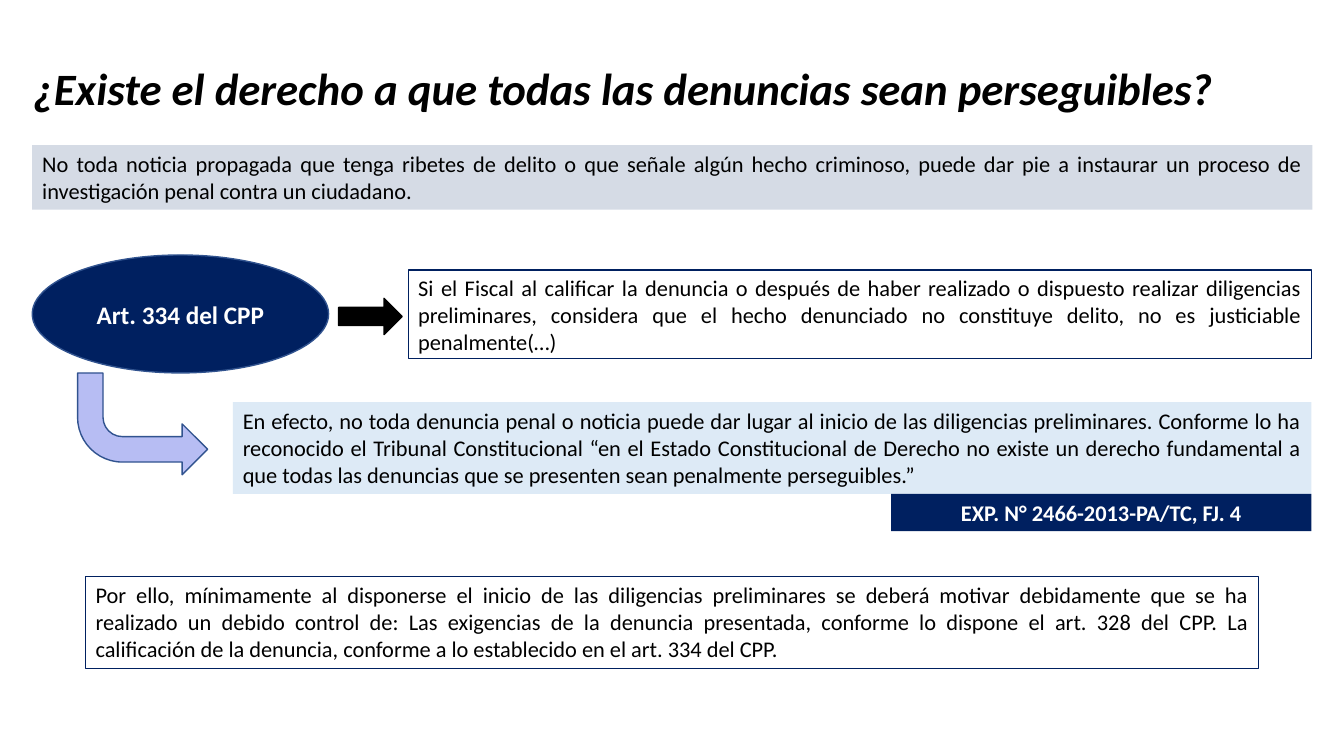
import collections

import pptx
import pptx.dml.color
import pptx.enum.shapes
import pptx.enum.text
import pptx.util

COLUMNS, ROWS = 160, 90
NAVY, BLACK, WHITE, OUTLINE = "002060", "000000", "FFFFFF", "31538F"
SHAPES = pptx.enum.shapes.MSO_SHAPE
ALIGN = pptx.enum.text.PP_ALIGN
ANCHOR = pptx.enum.text.MSO_ANCHOR

Box = collections.namedtuple("Box", "left top width height")

presentation = pptx.Presentation()
presentation.slide_width = pptx.util.Inches(13.33)
presentation.slide_height = pptx.util.Inches(7.5)


def color(value):
    return pptx.dml.color.RGBColor.from_string(value)


def inside(box, left, top, width, height):
    return Box(box.left + left, box.top + top, width, height)


def place(box):
    column = presentation.slide_width / COLUMNS
    row = presentation.slide_height / ROWS
    return [round(length * unit) for length, unit in zip(box, (column, row, column, row))]


def write(shape, text, size=16, ink=BLACK, align=ALIGN.JUSTIFY,
          anchor=ANCHOR.TOP, bold=False, italic=False):
    frame = shape.text_frame
    frame.word_wrap = True
    frame.vertical_anchor = anchor
    paragraph = frame.paragraphs[0]
    paragraph.alignment = align
    run = paragraph.add_run()
    run.text = text
    run.font.name = "Calibri"
    run.font.size = pptx.util.Pt(size)
    run.font.bold = bold
    run.font.italic = italic
    run.font.color.rgb = color(ink)


def add_shape(slide, kind, box, fill=None, line=None, line_width=1):
    shape = slide.shapes.add_shape(kind, *place(box))
    shape.shadow.inherit = False
    if fill:
        shape.fill.solid()
        shape.fill.fore_color.rgb = color(fill)
    else:
        shape.fill.background()
    if line:
        shape.line.color.rgb = color(line)
        shape.line.width = pptx.util.Pt(line_width)
    else:
        shape.line.fill.background()
    return shape


def add_title(slide, box):
    title = slide.shapes.add_textbox(*place(box))
    write(title, "¿Existe el derecho a que todas las denuncias sean perseguibles?",
          size=32, align=ALIGN.LEFT, bold=True, italic=True)


def add_introduction(slide, box):
    banner = add_shape(slide, SHAPES.RECTANGLE, box, "D5DBE5")
    write(banner, "No toda noticia propagada que tenga ribetes de delito o que señale algún "
          "hecho criminoso, puede dar pie a instaurar un proceso de investigación penal "
          "contra un ciudadano.")


def add_article(slide, box):
    article = add_shape(slide, SHAPES.OVAL, inside(box, 0, 0, 35.28, box.height), NAVY, OUTLINE)
    write(article, "Art. 334 del CPP", size=18, ink=WHITE, align=ALIGN.CENTER,
          anchor=ANCHOR.MIDDLE, bold=True)

    rule_left = 44.76
    rule_box = inside(box, rule_left, 1.8, box.width - rule_left, 10.56)
    rule = add_shape(slide, SHAPES.RECTANGLE, rule_box, WHITE, NAVY)
    write(rule, "Si el Fiscal al calificar la denuncia o después de haber realizado o dispuesto "
          "realizar diligencias preliminares, considera que el hecho denunciado no constituye "
          "delito, no es justiciable penalmente(…)", anchor=ANCHOR.MIDDLE)

    add_shape(slide, SHAPES.RIGHT_ARROW, inside(box, 36.48, 5.16, 7.56, 4.32), BLACK, BLACK)


def add_ruling(slide, box):
    arrow = add_shape(slide, SHAPES.BENT_ARROW, inside(box, 0, 0, 15.48, 12.12),
                      "B7BDF3", OUTLINE)
    for index, share in enumerate((0.25, 0.25, 0.25, 0.44)):
        arrow.adjustments[index] = share
    arrow.rotation = 180
    arrow.element.spPr.xfrm.set("flipH", "1")

    quote_left, quote_top, quote_height = 18.48, 3.48, 10.92
    quote_box = inside(box, quote_left, quote_top, box.width - quote_left, quote_height)
    quote = add_shape(slide, SHAPES.RECTANGLE, quote_box, "DDEAF6")
    write(quote, "En efecto, no toda denuncia penal o noticia puede dar lugar al inicio de las "
          "diligencias preliminares. Conforme lo ha reconocido el Tribunal Constitucional “en el "
          "Estado Constitucional de Derecho no existe un derecho fundamental a que todas las "
          "denuncias que se presenten sean penalmente perseguibles.”")

    case_width, case_top = 50.04, quote_top + quote_height
    case_box = inside(box, box.width - case_width, case_top, case_width, box.height - case_top)
    case = add_shape(slide, SHAPES.RECTANGLE, case_box, NAVY)
    write(case, "EXP. N° 2466-2013-PA/TC, FJ. 4", ink=WHITE, align=ALIGN.CENTER, bold=True)


def add_conclusion(slide, box):
    conclusion = add_shape(slide, SHAPES.RECTANGLE, box, line=NAVY, line_width=0.75)
    write(conclusion, "Por ello, mínimamente al disponerse el inicio de las diligencias "
          "preliminares se deberá motivar debidamente que se ha realizado un debido control de: "
          "Las exigencias de la denuncia presentada, conforme lo dispone el art. 328 del CPP. "
          "La calificación de la denuncia, conforme a lo establecido en el art. 334 del CPP.")


def main():
    slide = presentation.slides.add_slide(presentation.slide_layouts[6])
    add_title(slide, Box(2.76, 6.6, 150.24, 7.68))
    add_introduction(slide, Box(3.84, 17.28, 152.4, 7.68))
    add_article(slide, Box(3.84, 30.36, 152.28, 14.04))
    add_ruling(slide, Box(9.24, 44.4, 146.88, 18.84))
    add_conclusion(slide, Box(10.2, 68.64, 139.68, 10.92))
    presentation.save("out.pptx")


if __name__ == "__main__":
    main()
